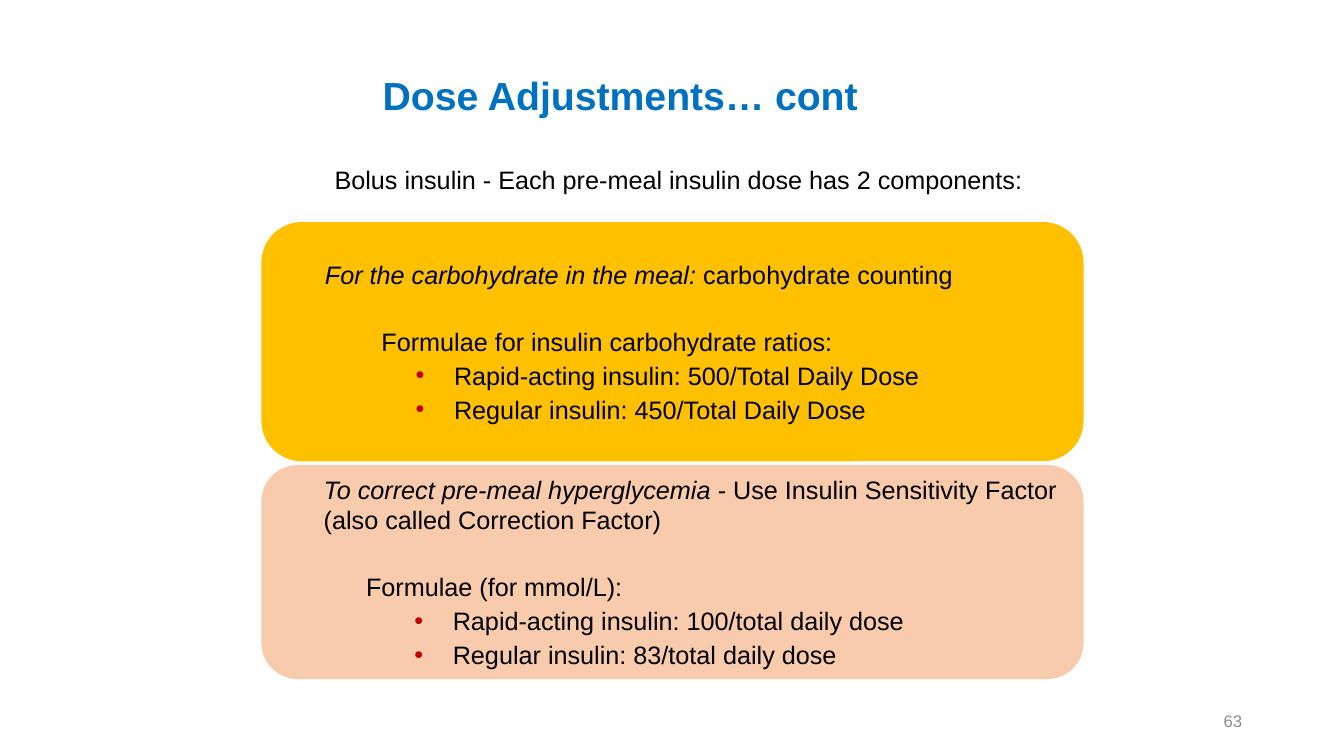
"""Build the dose adjustment slide."""
from dataclasses import dataclass
from typing import Any

from lxml import etree
from pptx import Presentation
from pptx import util as u
from pptx.dml.color import RGBColor
from pptx.enum import shapes, text
from pptx.oxml import ns

SCALE = 9144
FONT = "Arial"
SPACE = 2.7
GAP = 26.1
ROUND = shapes.MSO_SHAPE.ROUNDED_RECTANGLE
DIAG = shapes.MSO_SHAPE.ROUND_2_DIAG_RECTANGLE
LEFT, MID, RIGHT = text.PP_ALIGN.LEFT, text.PP_ALIGN.CENTER, text.PP_ALIGN.RIGHT


@dataclass(frozen=True)
class Line:
    """One paragraph with an optional slanted lead."""
    words: str
    lead: str = ""
    left: int = 0
    hang: int = 0
    space: float = SPACE
    level: int = 0


@dataclass(frozen=True)
class Box:
    """One placed block of text."""
    place: tuple[int, int, int, int]
    lines: tuple[Line, ...]
    form: Any = None
    fill: str = ""
    edge: str = ""
    align: Any = LEFT
    size: int = 18
    color: str = "000000"
    bold: bool = False


def px(count: int) -> int:
    """Turn px into EMU."""
    return u.Emu(count * SCALE)


def paint(code: str) -> RGBColor:
    """Turn a hex string into a colour."""
    return RGBColor.from_string(code)


def apply(target: Any, values: dict[str, Any]) -> None:
    """Set each named value on the target."""
    for name, value in values.items():
        setattr(target, name, value)


def dot(props: Any) -> None:
    """Add a red bullet to a paragraph."""
    tint = etree.SubElement(props, ns.qn("a:buClr"))
    etree.SubElement(tint, ns.qn("a:srgbClr"), val="C00000")
    etree.SubElement(props, ns.qn("a:buFont"), typeface=FONT)
    etree.SubElement(props, ns.qn("a:buChar"), char="•")


def write(para: Any, line: Line, box: Box, first: bool) -> None:
    """Fill one paragraph."""
    apply(para, {"alignment": box.align, "level": line.level,
                 "space_before": u.Pt(0 if first else line.space)})
    props = para._p.get_or_add_pPr()
    props.set("marL", str(px(line.left)))
    props.set("indent", str(px(-line.hang)))
    if line.hang:
        dot(props)
    for words, slant in ((line.lead, True), (line.words, False)):
        if words:
            run = para.add_run()
            run.text = words
            apply(run.font, {"name": FONT, "size": u.Pt(box.size),
                             "bold": box.bold, "italic": slant})
            run.font.color.rgb = paint(box.color)


def draw(slide: Any, box: Box) -> None:
    """Draw one box with its text."""
    place = [px(side) for side in box.place]
    if box.form is None:
        shape = slide.shapes.add_textbox(*place)
    else:
        shape = slide.shapes.add_shape(box.form, *place)
        shape.shadow.inherit = False
        shape.fill.solid()
        shape.fill.fore_color.rgb = paint(box.fill)
        if box.edge:
            shape.line.color.rgb = paint(box.edge)
            shape.line.width = u.Pt(1)
        else:
            shape.line.fill.background()
    frame = shape.text_frame
    apply(frame, {"word_wrap": True, "vertical_anchor": text.MSO_ANCHOR.MIDDLE})
    for rank, line in enumerate(box.lines):
        para = frame.add_paragraph() if rank else frame.paragraphs[0]
        write(para, line, box, rank == 0)


def panel(top: int, height: int, fill: str, head: Line, sub: Line,
          items: tuple[str, ...]) -> Box:
    """Make a rounded panel with a head, a formula line and bullets."""
    dots = tuple(Line(item, left=169, hang=38, level=3) for item in items)
    return Box((260, top, 814, height), (head, sub, *dots), ROUND, fill, fill)


BOXES = (
    Box((942, 695, 300, 40), (Line("63"),), align=RIGHT, size=12, color="8C8C8C"),
    panel(221, 236, "FFC000",
          Line("carbohydrate counting", "For the carbohydrate in the meal: ", 41),
          Line("Formulae for insulin carbohydrate ratios:", left=97, space=GAP),
          ("Rapid-acting insulin: 500/Total Daily Dose",
           "Regular insulin: 450/Total Daily Dose")),
    panel(462, 211, "F8CBAD",
          Line("- Use Insulin Sensitivity Factor (also called Correction Factor)",
               "To correct pre-meal hyperglycemia ", 41),
          Line("Formulae (for mmol/L):", left=83, space=GAP),
          ("Rapid-acting insulin: 100/total daily dose",
           "Regular insulin: 83/total daily dose")),
    Box((270, 146, 804, 65),
        (Line("Bolus insulin - Each pre-meal insulin dose has 2 components:", left=2),),
        DIAG, "FFFFFF", align=MID),
    Box((283, 71, 675, 47), (Line("Dose Adjustments… cont "),),
        align=MID, size=28, color="0070C0", bold=True),
)


def main() -> None:
    """Build and save the deck."""
    deck = Presentation()
    apply(deck, {"slide_width": px(1333), "slide_height": px(750)})
    slide = deck.slides.add_slide(deck.slide_layouts[6])
    for box in BOXES:
        draw(slide, box)
    deck.save("out.pptx")


if __name__ == "__main__":
    main()
